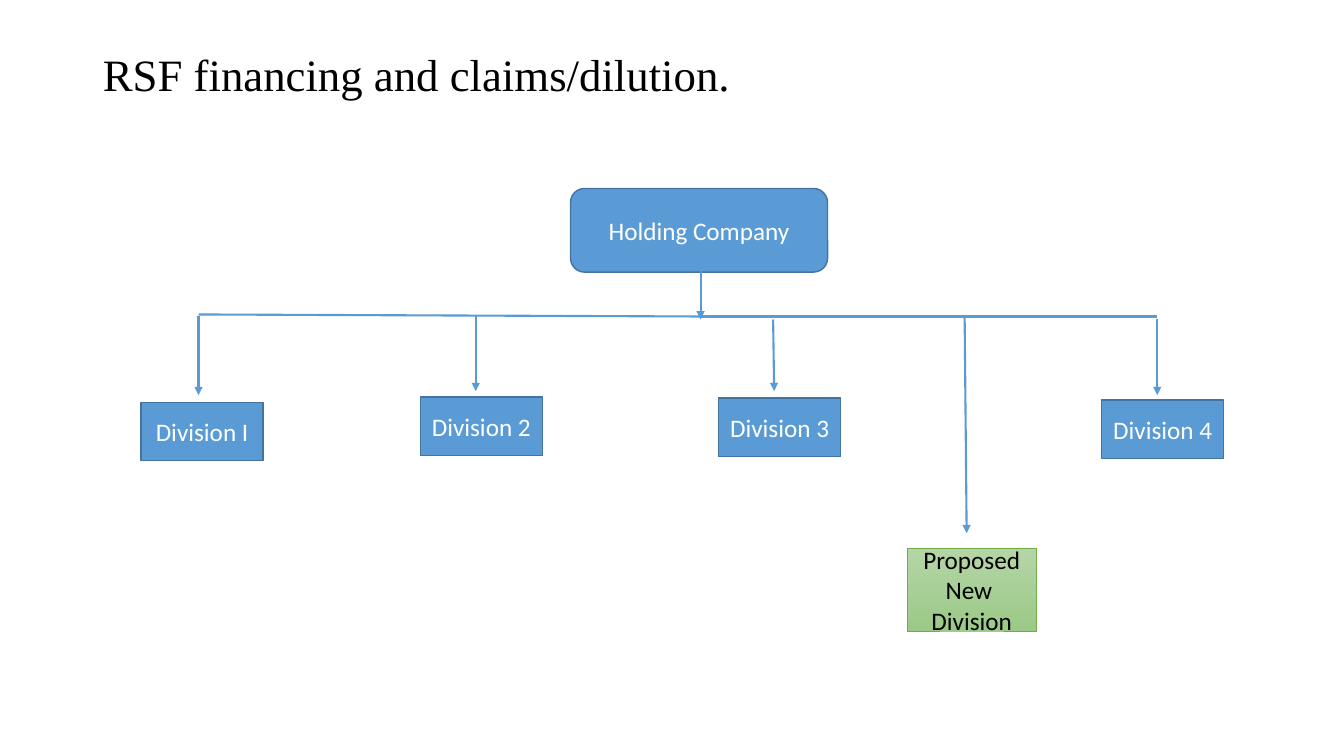
from lxml.etree import SubElement
from pptx import Presentation
from pptx.dml.color import RGBColor
from pptx.enum.shapes import MSO_CONNECTOR, MSO_SHAPE
from pptx.enum.text import MSO_ANCHOR, MSO_AUTO_SIZE, PP_ALIGN
from pptx.oxml.ns import qn
from pptx.util import Inches, Pt

BLUE = RGBColor(0x5B, 0x9B, 0xD5)
NAVY = RGBColor(0x43, 0x73, 0x9E)
GREEN = RGBColor(0x70, 0xAD, 0x47)
LIGHT = RGBColor(0xB5, 0xD5, 0xA7)
DEEP = RGBColor(0x9C, 0xC9, 0x87)
WHITE = RGBColor(0xFF, 0xFF, 0xFF)
BLACK = RGBColor(0x00, 0x00, 0x00)

# Grid of ten columns and ten rows to the inch
COLS, ROWS = 133.33, 75
CELL = Inches(0.1)


def grid(*cells):
    return [round(cell * CELL) for cell in cells]


def apply(item, values):
    for name, value in values.items():
        setattr(item, name, value)


class Chart:
    """Style and current slide of an organisation chart."""

    head = {"name": "Times New Roman", "size": Pt(32)}
    body = {"name": "Calibri", "size": Pt(18)}

    def __init__(self, deck):
        self.slide = deck.slides.add_slide(deck.slide_layouts[5])

    def label(self, shape, text, font, color, para):
        frame = shape.text_frame
        frame.text = text
        apply(frame, {"word_wrap": True, "auto_size": MSO_AUTO_SIZE.NONE,
                      "vertical_anchor": MSO_ANCHOR.MIDDLE})
        for line in frame.paragraphs:
            apply(line, para)
            for run in line.runs:
                apply(run.font, font)
                run.font.color.rgb = color

    def title(self, text, *cells):
        shape = self.slide.shapes.title
        apply(shape, dict(zip(("left", "top", "width", "height"), grid(*cells))))
        self.label(shape, text, self.head, BLACK,
                   {"alignment": PP_ALIGN.LEFT, "line_spacing": 0.9})

    def box(self, text, *cells, kind=MSO_SHAPE.RECTANGLE, fade=None,
            edge=NAVY, width=1, color=WHITE):
        shape = self.slide.shapes.add_shape(kind, *grid(*cells))
        shape.shadow.inherit = False
        if fade:
            shape.fill.gradient()
            shape.fill.gradient_angle = 270
            for stop, tint in zip(shape.fill.gradient_stops, fade):
                stop.color.rgb = tint
        else:
            shape.fill.solid()
            shape.fill.fore_color.rgb = BLUE
        shape.line.color.rgb = edge
        shape.line.width = Pt(width)
        self.label(shape, text, self.body, color, {"alignment": PP_ALIGN.CENTER})

    def link(self, *cells, arrow=False, width=1.5):
        line = self.slide.shapes.add_connector(MSO_CONNECTOR.STRAIGHT, *grid(*cells))
        line.line.color.rgb = BLUE
        line.line.width = Pt(width)
        props = line._element.spPr
        if arrow:
            SubElement(props.find(qn("a:ln")), qn("a:tailEnd"), type="triangle")
        SubElement(props, qn("a:effectLst"))


def main():
    deck = Presentation()
    deck.slide_width, deck.slide_height = grid(COLS, ROWS)
    chart = Chart(deck)

    # Heading and parent company
    chart.title("RSF financing and claims/dilution.", 9.2, 4, 115, 7.2)
    chart.box("Holding Company", 56.6, 18.7, 25.5, 8.3,
              kind=MSO_SHAPE.ROUNDED_RECTANGLE)

    # Trunk and crossbar
    hub, bar = 69.5, 31.4
    chart.link(hub, 26.9, hub, bar)
    chart.link(hub, bar, 19.7, 31.2)
    chart.link(hub, bar, 114.8, bar)
    chart.link(hub, bar, hub, 31.7, arrow=True, width=0.5)

    # Divisions: name, box left and top, arrow start and end
    units = [
        ("Division I", 14, 39.9, (19.7, bar, 19.7, 39.2)),
        ("Division 2", 41.7, 39.4, (47.2, bar, 47.2, 38.8)),
        ("Division 3", 71.3, 39.5, (76.7, 31.7, 76.8, 38.8)),
        ("Division 4", 109.3, 39.7, (114.8, 31.6, 114.8, 39.2)),
    ]
    for name, left, top, ends in units:
        chart.link(*ends, arrow=True)
        chart.box(name, left, top, 12.1, 5.8)

    # Proposed division
    chart.link(95.7, bar, 95.9, 52.9, arrow=True)
    chart.box("Proposed\nNew \nDivision", 90, 54.4, 12.8, 8.2,
              fade=(LIGHT, DEEP), edge=GREEN, width=0.5, color=BLACK)

    deck.save("out.pptx")


if __name__ == "__main__":
    main()
